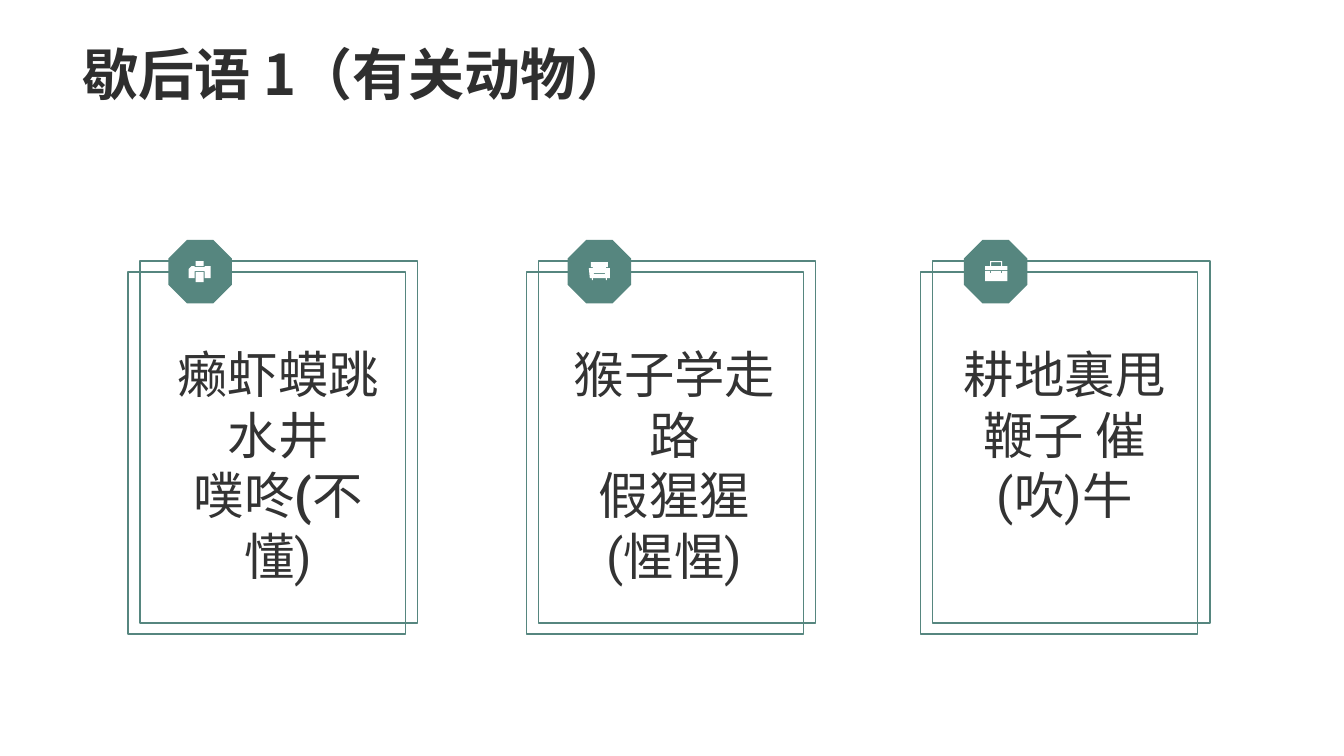
import pptx
import pptx.dml.color
import pptx.enum.shapes
import pptx.enum.text
import pptx.oxml.ns
import pptx.util
from lxml import etree
from pptx.util import Inches

GREEN, WHITE, TITLE_COLOR, TEXT_COLOR = "56867F", "FFFFFF", "2F2F2F", "333333"
CJK_FONT, BODY_FONT = "Noto Sans CJK SC", "Roboto"
FRAME_TOP, FRAME_WIDTH, FRAME_HEIGHT = 2.7, 2.75, 3.59
BADGE_TOP, BADGE_SIZE = 2.38, 0.63

# Icon outlines, in hundredths of an inch from the badge's top left corner
PRINTER = [
    [(35, 32), (35, 42), (27, 42), (27, 32)],
    [(26, 26), (26, 27), (36, 27), (36, 26), (42, 26), (42, 38), (36, 38),
     (36, 31), (26, 31), (26, 38), (20, 38), (20, 29), (23, 26)],
    [(35, 21), (35, 26), (27, 26), (27, 21)],
]
SOFA = [
    [(25, 28), (26, 34), (37, 34), (38, 28), (42, 28), (42, 38), (39, 38), (39, 40),
     (38, 40), (38, 38), (25, 38), (25, 40), (24, 40), (24, 38), (22, 38), (21, 28)],
    [(40, 22), (40, 27), (38, 27), (37, 33), (26, 33), (25, 27), (23, 27), (23, 22)],
]
BRIEFCASE = [
    [(26, 31), (26, 33), (27, 33), (27, 31), (37, 31), (37, 33), (38, 33), (38, 31),
     (43, 31), (43, 41), (21, 41), (21, 31)],
    [(38, 21), (38, 26), (43, 26), (43, 30), (21, 30), (21, 26), (26, 26), (26, 21)],
    [(37, 22), (27, 22), (27, 26), (37, 26)],
]

# Frame left, badge left, text left, icon, paragraphs of (text, bold) spans
CARDS = [
    (1.27, 1.67, 1.63, PRINTER,
     [[("癞虾蟆跳水井", False)], [("噗咚", False), ("(", True), ("不懂)", False)]]),
    (5.22, 5.63, 5.56, SOFA,
     [[("猴子学走路", False)], [("假猩猩(惺惺)", False)]]),
    (9.13, 9.56, 9.43, BRIEFCASE,
     [[("耕地裏甩鞭子 催(吹)牛", False)]]),
]


def rgb(value):
    return pptx.dml.color.RGBColor.from_string(value)


def style_span(span, font_name, size, color, bold):
    font = span.font
    font.name, font.size, font.bold = font_name, pptx.util.Pt(size), bold
    font.color.rgb = rgb(color)
    east_asian = etree.SubElement(font._element, pptx.oxml.ns.qn("a:ea"))
    east_asian.set("typeface", CJK_FONT)


def fill_plain(shape, color):
    shape.shadow.inherit = False
    shape.fill.solid()
    shape.fill.fore_color.rgb = rgb(color)
    shape.line.fill.background()


def add_title(page, text):
    title = page.shapes.title
    title.left, title.top = Inches(0.72), Inches(0)
    title.width, title.height = Inches(11.88), Inches(1.12)
    frame = title.text_frame
    frame.text = text
    frame.auto_size = pptx.enum.text.MSO_AUTO_SIZE.NONE
    frame.vertical_anchor = pptx.enum.text.MSO_ANCHOR.BOTTOM
    para = frame.paragraphs[0]
    para.alignment = pptx.enum.text.PP_ALIGN.LEFT
    para.line_spacing = 0.9
    style_span(para.runs[0], CJK_FONT, 40, TITLE_COLOR, True)


def add_double_frame(page, left, top):
    for shift_x, shift_y in [(0, 0), (0.12, -0.11)]:
        frame = page.shapes.add_shape(
            pptx.enum.shapes.MSO_SHAPE.RECTANGLE, Inches(left + shift_x),
            Inches(top + shift_y), Inches(FRAME_WIDTH), Inches(FRAME_HEIGHT))
        frame.shadow.inherit = False
        frame.fill.background()
        frame.line.color.rgb = rgb(GREEN)
        frame.line.width = pptx.util.Pt(1)


def add_badge(page, left, top, outlines):
    badge = page.shapes.add_shape(
        pptx.enum.shapes.MSO_SHAPE.OCTAGON, Inches(left), Inches(top),
        Inches(BADGE_SIZE), Inches(BADGE_SIZE))
    fill_plain(badge, GREEN)
    builder = page.shapes.build_freeform(*outlines[0][0], scale=Inches(0.01))
    for index, outline in enumerate(outlines):
        if index:
            builder.move_to(*outline[0])
        builder.add_line_segments(outline[1:], close=True)
    fill_plain(builder.convert_to_shape(Inches(left), Inches(top)), WHITE)


def add_saying(page, left, top, paragraphs):
    box = page.shapes.add_textbox(Inches(left), Inches(top), Inches(2.26), Inches(2.6))
    frame = box.text_frame
    frame.word_wrap = True
    for index, spans in enumerate(paragraphs):
        para = frame.add_paragraph() if index else frame.paragraphs[0]
        para.alignment = pptx.enum.text.PP_ALIGN.CENTER
        for text, bold in spans:
            span = para.add_run()
            span.text = text
            style_span(span, BODY_FONT, 36, TEXT_COLOR, bold)


def main():
    deck = pptx.Presentation()
    deck.slide_width, deck.slide_height = Inches(13.33), Inches(7.5)
    page = deck.slides.add_slide(deck.slide_layouts.get_by_name("Title Only"))
    add_title(page, "歇后语 1（有关动物）")
    for frame_left, badge_left, text_left, icon, paragraphs in CARDS:
        add_double_frame(page, frame_left, FRAME_TOP)
        add_badge(page, badge_left, BADGE_TOP, icon)
        add_saying(page, text_left, 3.36, paragraphs)
    deck.save("out.pptx")


if __name__ == "__main__":
    main()
